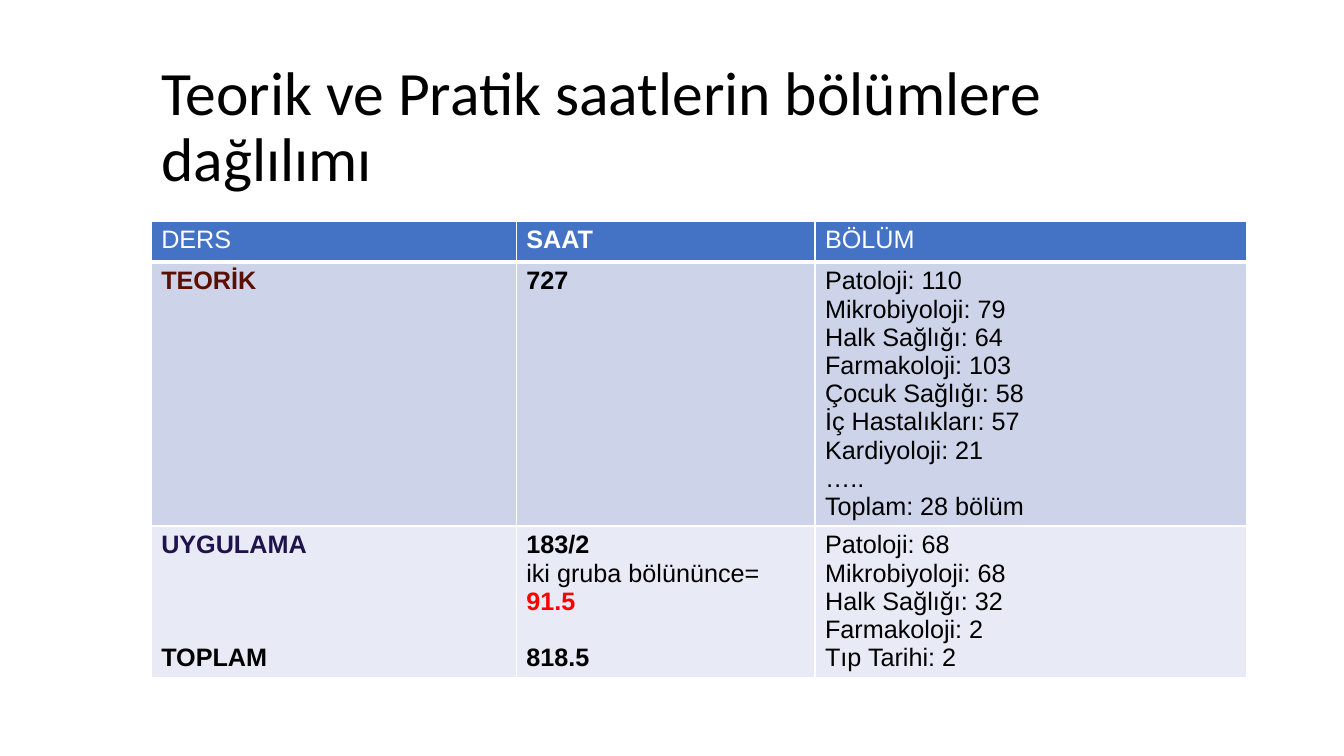
from dataclasses import dataclass

import pptx
import pptx.dml.color
import pptx.enum.text
import pptx.oxml
import pptx.oxml.ns
import pptx.util
from pptx.util import Cm


@dataclass(frozen=True)
class Theme:
    title_font: str = "Calibri"
    table_font: str = "Arial"
    title_size: int = 44
    table_size: int = 18
    line_height: float = 20.15
    black: str = "000000"
    white: str = "FFFFFF"
    red: str = "FF0000"
    brown: str = "5B0F00"
    indigo: str = "20124D"
    header_fill: str = "4472C4"
    band_fills: tuple = ("CDD4EA", "E8EBF5")


THEME = Theme()


@dataclass(frozen=True)
class Line:
    text: str
    color: str = THEME.black
    bold: bool = False
    gap_lines: int = 0


def plain(*texts):
    return [Line(text) for text in texts]


HEADER = [
    [Line("DERS", THEME.white)],
    [Line("SAAT", THEME.white, True)],
    [Line("BÖLÜM", THEME.white)],
]
THEORY = [
    [Line("TEORİK", THEME.brown, True)],
    [Line("727", bold=True)],
    plain("Patoloji: 110", "Mikrobiyoloji: 79", "Halk Sağlığı: 64",
          "Farmakoloji: 103", "Çocuk Sağlığı: 58", "İç Hastalıkları: 57",
          "Kardiyoloji: 21", "…..", "Toplam: 28 bölüm"),
]
PRACTICE = [
    [Line("UYGULAMA", THEME.indigo, True), Line("TOPLAM", bold=True, gap_lines=3)],
    [Line("183/2", bold=True), Line("iki gruba bölününce="),
     Line("91.5", THEME.red, True), Line("818.5", bold=True, gap_lines=1)],
    plain("Patoloji: 68", "Mikrobiyoloji: 68", "Halk Sağlığı: 32",
          "Farmakoloji: 2", "Tıp Tarihi: 2"),
]
COLUMN_WIDTHS = (9.2, 7.53, 10.87)
ROW_HEIGHTS = (1.03, 6.65, 3.81)


def rgb(color):
    return pptx.dml.color.RGBColor.from_string(color)


def style_font(font, name, size, color, bold=False):
    font.name = name
    font.size = pptx.util.Pt(size)
    font.color.rgb = rgb(color)
    font.bold = bold


def add_title(page, text):
    title = page.shapes.title
    title.left, title.top, title.width, title.height = Cm(3.81), Cm(1.19), Cm(26.67), Cm(4.11)
    frame = title.text_frame
    frame.text = text
    frame.word_wrap = True
    frame.auto_size = pptx.enum.text.MSO_AUTO_SIZE.NONE
    frame.vertical_anchor = pptx.enum.text.MSO_ANCHOR.MIDDLE
    para = frame.paragraphs[0]
    para.alignment = pptx.enum.text.PP_ALIGN.LEFT
    para.line_spacing = 0.9
    style_font(para.font, THEME.title_font, THEME.title_size, THEME.black)


def set_borders(cell, top, bottom):
    """Draw white borders; top and bottom are widths in points."""
    properties = cell._tc.get_or_add_tcPr()
    for side, width in (("L", 1), ("R", 1), ("T", top), ("B", bottom)):
        properties.append(pptx.oxml.parse_xml(
            f'<a:ln{side} {pptx.oxml.ns.nsdecls("a")} w="{pptx.util.Pt(width)}">'
            f'<a:solidFill><a:srgbClr val="{THEME.white}"/></a:solidFill></a:ln{side}>'))


def fill_cell(cell, lines, fill):
    cell.fill.solid()
    cell.fill.fore_color.rgb = rgb(fill)
    frame = cell.text_frame
    frame.text = "\n".join(line.text for line in lines)
    for para, line in zip(frame.paragraphs, lines):
        style_font(para.font, THEME.table_font, THEME.table_size, line.color, line.bold)
        if line.gap_lines:
            para.space_before = pptx.util.Pt(line.gap_lines * THEME.line_height)


def add_hours_table(page, rows):
    table = page.shapes.add_table(
        len(rows), len(COLUMN_WIDTHS), Cm(3.81), Cm(5.57),
        Cm(sum(COLUMN_WIDTHS)), Cm(sum(ROW_HEIGHTS))).table
    for column, width in zip(table.columns, COLUMN_WIDTHS):
        column.width = Cm(width)
    for row, height in zip(table.rows, ROW_HEIGHTS):
        row.height = Cm(height)
    fills = (THEME.header_fill, *THEME.band_fills)
    for row_index, (row, fill) in enumerate(zip(rows, fills)):
        for column_index, lines in enumerate(row):
            cell = table.cell(row_index, column_index)
            set_borders(cell, top=3 if row_index == 1 else 1, bottom=3 if row_index == 0 else 1)
            fill_cell(cell, lines, fill)


def main():
    deck = pptx.Presentation()
    deck.slide_width, deck.slide_height = Cm(33.87), Cm(19.05)
    page = deck.slides.add_slide(deck.slide_layouts[5])
    add_title(page, "Teorik ve Pratik saatlerin bölümlere dağlılımı")
    add_hours_table(page, [HEADER, THEORY, PRACTICE])
    deck.save("out.pptx")


if __name__ == "__main__":
    main()
